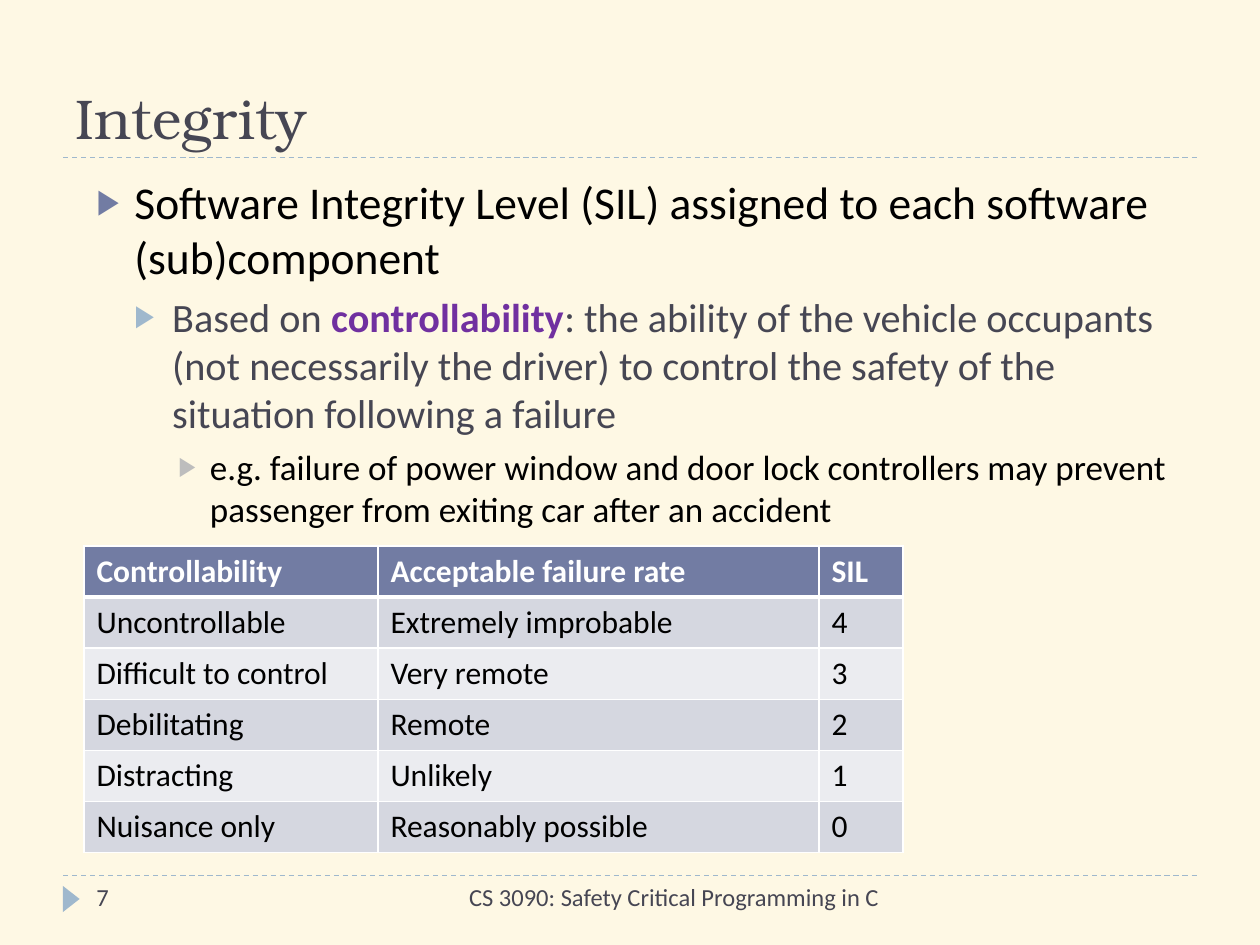
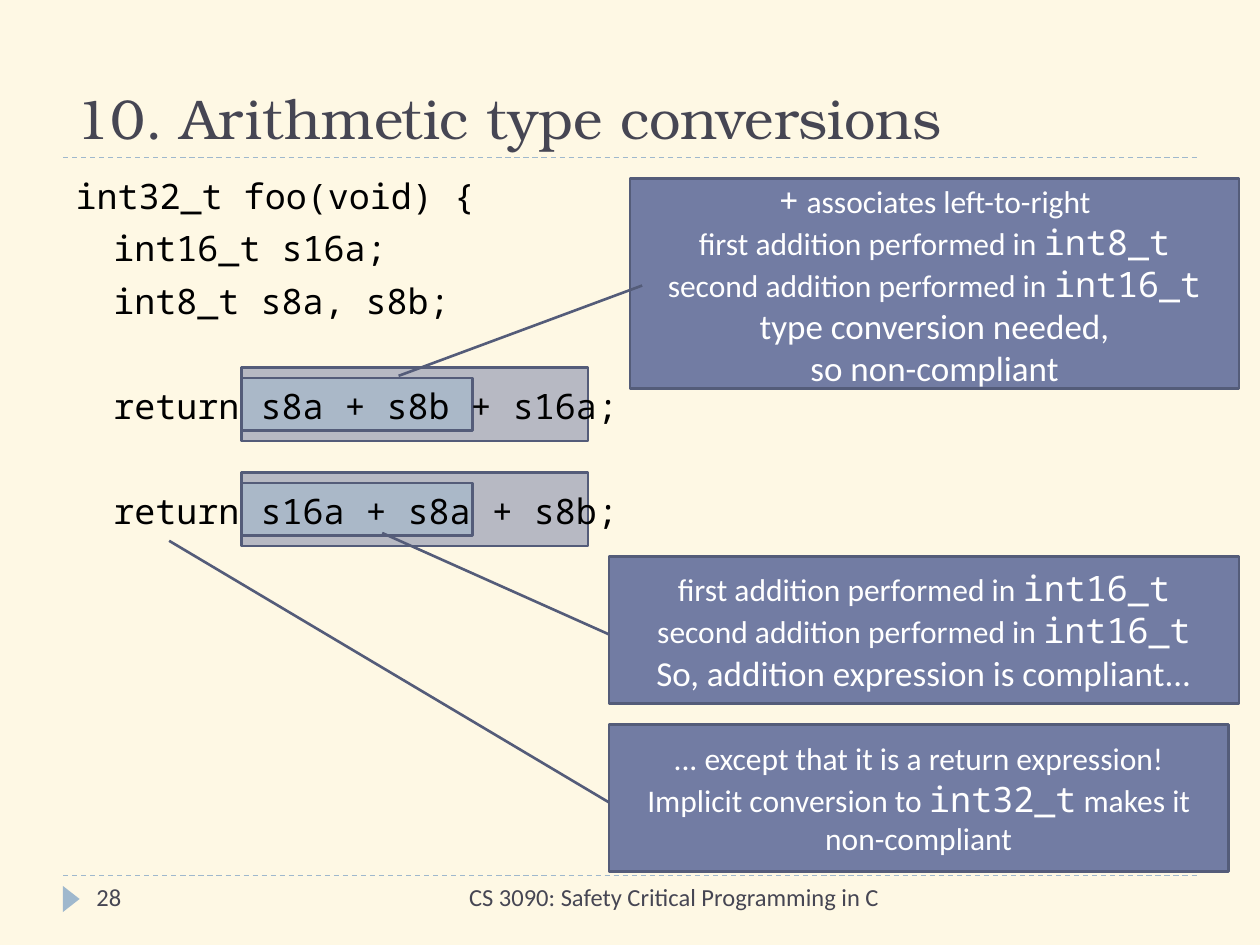
from lxml import etree
from pptx import Presentation
from pptx.dml.color import RGBColor
from pptx.enum.dml import MSO_LINE
from pptx.enum.shapes import MSO_CONNECTOR, MSO_SHAPE
from pptx.enum.text import MSO_ANCHOR, MSO_AUTO_SIZE, PP_ALIGN
from pptx.oxml.ns import qn
from pptx.util import Pt

RECTANGLE = MSO_SHAPE.RECTANGLE
TRIANGLE = MSO_SHAPE.ISOSCELES_TRIANGLE
CALLOUT = MSO_SHAPE.LINE_CALLOUT_1
STRAIGHT = MSO_CONNECTOR.STRAIGHT
DASH = MSO_LINE.DASH
LEFT, CENTER, RIGHT = PP_ALIGN.LEFT, PP_ALIGN.CENTER, PP_ALIGN.RIGHT
TOP, MIDDLE, BOTTOM = MSO_ANCHOR.TOP, MSO_ANCHOR.MIDDLE, MSO_ANCHOR.BOTTOM
NO_AUTOFIT = MSO_AUTO_SIZE.NONE
TITLE_AND_CONTENT = 1

COLORS = {
    "background": "FEF8E4", "slate": "464653", "indigo": "727CA3",
    "outline": "545C79", "sky": "9FB8CD", "silver": "BDBDBD",
    "purple": "7030A0", "black": "000000", "white": "FFFFFF",
    "row_dark": "D5D7E0", "row_light": "EBECF0",
}
SANS, MONO, SERIF = "Calibri", "Noto Sans Mono", "TeX Gyre Bonum"


def text_format(name, size, color, bold=False):
    return {"font": {"name": name, "size": Pt(size), "bold": bold}, "color": color}


FORMATS = {
    "title": text_format(SERIF, 32, "slate"),
    "footer": text_format(SANS, 14, "slate"),
    "level0": text_format(SANS, 26, "black"),
    "level1": text_format(SANS, 23, "slate"),
    "level2": text_format(SANS, 20, "black"),
    "term": text_format(SANS, 23, "purple", True),
    "header": text_format(SANS, 18, "white", True),
    "cell": text_format(SANS, 18, "black"),
    "code": text_format(MONO, 20, "black"),
    "note": text_format(SANS, 18, "white"),
    "note_large": text_format(SANS, 20, "white"),
    "note_code": text_format(MONO, 20, "white"),
}
# margin, first-line indent, space before, bullet colour
LEVELS = [
    (21.6, -21.6, 6, "indigo"),
    (43.2, -21.6, 5, "sky"),
    (64.8, -18, 5, "silver"),
]
FOOTER = "CS 3090: Safety Critical Programming in C"
RULE_LEFT, RULE_RIGHT = 36, 684
RULE_TOPS = (500.4, 90)
CODE_GAP, CODE_BLANK_LINE = 6, 30
CODE_INDENT = 21.6


def rgb(color):
    return RGBColor.from_string(COLORS[color])


def points(*lengths):
    return [Pt(length) for length in lengths]


def add_xml(parent, tag, **attributes):
    return etree.SubElement(parent, qn(tag), attributes)


class Deck:
    """Holds the shared style and the slide being built."""

    def __init__(self):
        self.presentation = Presentation()
        self.presentation.slide_width, self.presentation.slide_height = points(720, 540)
        self.slide = None

    def start_slide(self, title, number):
        layout = self.presentation.slide_layouts[TITLE_AND_CONTENT]
        self.slide = self.presentation.slides.add_slide(layout)
        fill = self.slide.background.fill
        fill.solid()
        fill.fore_color.rgb = rgb("background")
        self.place(self.slide.shapes.title, 36, 12, 648, 78, BOTTOM)
        self.add_runs(self.slide.shapes.title.text_frame.paragraphs[0], [(title, "title")])
        for top in RULE_TOPS:
            self.rule(top)
        marker = self.shape(TRIANGLE, (33.2, 508.9, 15, 9.6), "sky")
        marker.rotation = 90
        self.text_box((228, 500.4, 281.5, 39.6), FOOTER, RIGHT)
        self.text_box((48, 500.4, 156, 28.8), number, LEFT)

    def place(self, shape, left, top, width, height, anchor):
        box = dict(zip(("left", "top", "width", "height"), points(left, top, width, height)))
        for name, value in box.items():
            setattr(shape, name, value)
        frame = shape.text_frame
        layout = {"auto_size": NO_AUTOFIT, "word_wrap": True, "vertical_anchor": anchor}
        for name, value in layout.items():
            setattr(frame, name, value)

    def add_runs(self, paragraph, runs, alignment=LEFT):
        paragraph.alignment = alignment
        for text, style in runs:
            run = paragraph.add_run()
            run.text = text
            for name, value in FORMATS[style]["font"].items():
                setattr(run.font, name, value)
            run.font.color.rgb = rgb(FORMATS[style]["color"])

    def paragraphs(self, frame, count):
        for _ in range(count - 1):
            frame.add_paragraph()
        return frame.paragraphs

    def text_box(self, box, text, alignment):
        shape = self.slide.shapes.add_textbox(*points(*box))
        self.place(shape, *box, TOP)
        self.add_runs(shape.text_frame.paragraphs[0], [(text, "footer")], alignment)

    def rule(self, top):
        line = self.slide.shapes.add_connector(
            STRAIGHT, *points(RULE_LEFT, top, RULE_RIGHT, top))
        line.line.color.rgb = rgb("sky")
        line.line.width = Pt(0.75)
        line.line.dash_style = DASH
        add_xml(line.element.spPr, "a:effectLst")

    def shape(self, kind, box, fill, outline=None):
        shape = self.slide.shapes.add_shape(kind, *points(*box))
        shape.shadow.inherit = False
        shape.fill.solid()
        shape.fill.fore_color.rgb = rgb(fill)
        if outline:
            shape.line.color.rgb = rgb(outline)
            shape.line.width = Pt(1.5)
        else:
            shape.line.fill.background()
        return shape

    def highlight(self, box, fill):
        """Add a half-transparent box behind the body text."""
        shape = self.shape(RECTANGLE, box, fill, "outline")
        color = shape.element.spPr.find(qn("a:solidFill")).find(qn("a:srgbClr"))
        add_xml(color, "a:alpha", val="50000")
        self.slide.placeholders[1].element.addprevious(shape.element)

    def callout(self, box, pointer, lines):
        shape = self.shape(CALLOUT, box, "indigo", "outline")
        self.place(shape, *box, MIDDLE)
        for index, value in enumerate(pointer):
            shape.adjustments[index] = value
        for paragraph, runs in zip(self.paragraphs(shape.text_frame, len(lines)), lines):
            self.add_runs(paragraph, runs, CENTER)

    def indent(self, paragraph, margin, first_line, space_before):
        paragraph.space_before = Pt(space_before)
        properties = paragraph._p.get_or_add_pPr()
        properties.set("marL", str(Pt(margin)))
        properties.set("indent", str(Pt(first_line)))
        return properties

    def bullets(self, box, items):
        body = self.slide.placeholders[1]
        self.place(body, *box, TOP)
        for paragraph, (level, runs) in zip(self.paragraphs(body.text_frame, len(items)), items):
            margin, first_line, space_before, color = LEVELS[level]
            paragraph.level = level
            properties = self.indent(paragraph, margin, first_line, space_before)
            bullet_color = add_xml(properties, "a:buClr")
            add_xml(bullet_color, "a:srgbClr", val=COLORS[color])
            add_xml(properties, "a:buSzPct", val="76000")
            add_xml(properties, "a:buChar", char="▶")
            self.add_runs(paragraph, runs)

    def code(self, box, lines):
        """Add code lines, each given as (text, indented, blank lines before)."""
        body = self.slide.placeholders[1]
        self.place(body, *box, TOP)
        for paragraph, line in zip(self.paragraphs(body.text_frame, len(lines)), lines):
            text, indented, blank_lines = line
            margin = CODE_INDENT if indented else 0
            gap = CODE_GAP + blank_lines * CODE_BLANK_LINE
            add_xml(self.indent(paragraph, margin, 0, gap), "a:buNone")
            self.add_runs(paragraph, [(text, "code")])

    def table(self, left, top, widths, row_height, rows):
        frame = self.slide.shapes.add_table(
            len(rows), len(widths),
            *points(left, top, sum(widths), row_height * len(rows)))
        table = frame.table
        for column, width in zip(table.columns, widths):
            column.width = Pt(width)
        for row_index, texts in enumerate(rows):
            table.rows[row_index].height = Pt(row_height)
            header = row_index == 0
            fill = "indigo" if header else ("row_light", "row_dark")[row_index % 2]
            for column_index, text in enumerate(texts):
                cell = table.cell(row_index, column_index)
                self.add_runs(cell.text_frame.paragraphs[0],
                              [(text, "header" if header else "cell")])
                self.borders(cell, {"a:lnL": 1, "a:lnR": 1,
                                    "a:lnT": 3 if row_index == 1 else 1,
                                    "a:lnB": 3 if header else 1})
                cell.fill.solid()
                cell.fill.fore_color.rgb = rgb(fill)

    def borders(self, cell, widths):
        properties = cell._tc.get_or_add_tcPr()
        for side, width in widths.items():
            line = add_xml(properties, side, w=str(Pt(width)))
            add_xml(add_xml(line, "a:solidFill"), "a:srgbClr", val=COLORS["white"])


def build_integrity(deck):
    deck.start_slide("Integrity", "7")
    deck.bullets((48, 96, 648, 388.8), [
        (0, [("Software Integrity Level (SIL) assigned to each software (sub)component",
              "level0")]),
        (1, [("Based on ", "level1"), ("controllability", "term"),
             (": the ability of the vehicle occupants (not necessarily the driver) "
              "to control the safety of the situation following a failure", "level1")]),
        (2, [("e.g. failure of power window and door lock controllers may prevent "
              "passenger from exiting car after an accident", "level2")]),
    ])
    deck.table(48, 312, (168, 252, 48), 29.2, [
        ("Controllability", "Acceptable failure rate", "SIL"),
        ("Uncontrollable", "Extremely improbable", "4"),
        ("Difficult to control", "Very remote", "3"),
        ("Debilitating", "Remote", "2"),
        ("Distracting", "Unlikely", "1"),
        ("Nuisance only", "Reasonably possible", "0"),
    ])


def build_conversions(deck):
    deck.start_slide("10. Arithmetic type conversions", "28")
    for top in (210, 270):
        deck.highlight((138, top, 198, 42), "indigo")
        deck.highlight((138, top + 6, 132, 30), "sky")
    deck.code((36, 96, 648, 388.8), [
        ("int32_t foo(void) {", False, 0),
        ("int16_t s16a;", True, 0),
        ("int8_t s8a, s8b;", True, 0),
        ("return s8a + s8b + s16a;", True, 1),
        ("return s16a + s8a + s8b;", True, 1),
    ])
    first = ("first addition performed in ", "note")
    second = ("second addition performed in ", "note")
    int16 = ("int16_t", "note_code")
    deck.callout((360, 102, 348, 120), (0.51, 0.02, 0.94, -0.38), [
        [("+", "note_code"), (" associates left-to-right", "note")],
        [first, ("int8_t", "note_code")],
        [second, int16],
        [("type conversion needed,", "note_large")],
        [("so non-compliant", "note_large")],
    ])
    deck.callout((348, 318, 360, 84), (0.53, 0, -0.16, -0.36), [
        [first, int16],
        [second, int16],
        [("So, addition expression is compliant...", "note_large")],
    ])
    deck.callout((348, 414, 354, 84), (0.53, 0, -1.25, -0.71), [
        [("... except that it is a return expression!", "note")],
        [("Implicit conversion to ", "note"), ("int32_t", "note_code"),
         (" makes it non-compliant", "note")],
    ])


def main():
    deck = Deck()
    build_integrity(deck)
    build_conversions(deck)
    deck.presentation.save("out.pptx")


if __name__ == "__main__":
    main()
